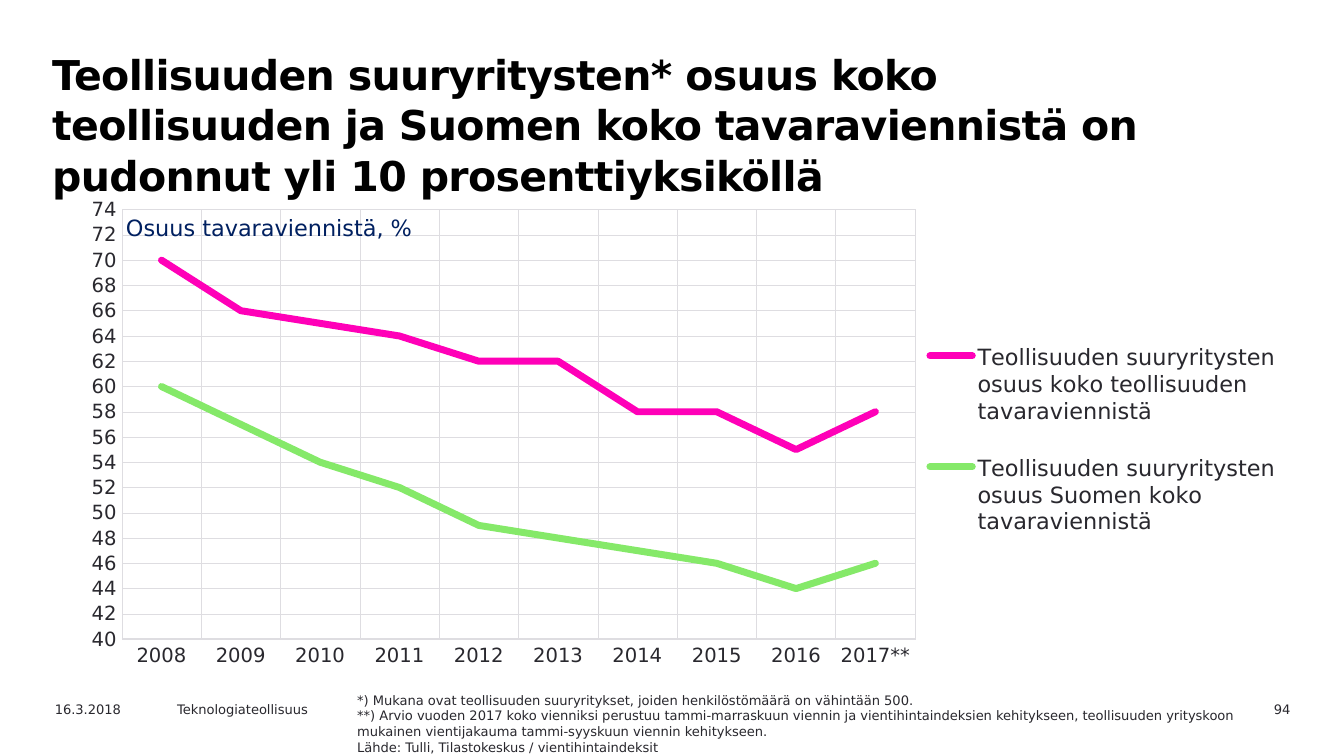
"""Build a slide on the export share of large Finnish industrial companies."""
import pptx
import pptx.chart.data
import pptx.dml.color
import pptx.enum.chart
import pptx.enum.dml
import pptx.enum.text
import pptx.oxml
import pptx.oxml.ns
import pptx.util

Inches = pptx.util.Inches
Pt = pptx.util.Pt
RGBColor = pptx.dml.color.RGBColor
ALIGN = pptx.enum.text.PP_ALIGN

FONT = "DejaVu Sans"
BLACK = RGBColor(0x00, 0x00, 0x00)
INK = RGBColor(0x29, 0x28, 0x2E)
NAVY = RGBColor(0x00, 0x20, 0x60)
GRID = RGBColor(0xDE, 0xDD, 0xE1)
PINK = RGBColor(0xFF, 0x00, 0xB8)
GREEN = RGBColor(0x85, 0xE9, 0x69)


def write_text(text, left, top, width, height, size=7, color=INK, bold=False,
               align=ALIGN.LEFT, line_pitch=None, tracking=None):
    frame = slide.shapes.add_textbox(
        Inches(left), Inches(top), Inches(width), Inches(height)).text_frame
    frame.word_wrap = True
    frame.text = text
    for paragraph in frame.paragraphs:
        paragraph.alignment = align
        if line_pitch:
            paragraph.line_spacing = Pt(line_pitch)
        for run in paragraph.runs:
            run.font.name = FONT
            run.font.size = Pt(size)
            run.font.bold = bold
            run.font.color.rgb = color
            if tracking:
                run.font._element.set("spc", str(round(tracking * 100)))


def place(element, index, inner=False, **fractions):
    for old in element.findall(pptx.oxml.ns.qn("c:layout")):
        element.remove(old)
    target = '<c:layoutTarget val="inner"/>' if inner else ""
    modes = "".join(f'<c:{key}Mode val="edge"/>' for key in fractions if key in "xy")
    values = "".join(f'<c:{key} val="{value}"/>' for key, value in fractions.items())
    element.insert(index, pptx.oxml.parse_xml(
        f'<c:layout {pptx.oxml.ns.nsdecls("c")}><c:manualLayout>'
        f'{target}{modes}{values}</c:manualLayout></c:layout>'))


presentation = pptx.Presentation()
presentation.slide_width = Inches(10)
presentation.slide_height = Inches(10 * 9 / 16)
slide = presentation.slides.add_slide(presentation.slide_layouts[6])

write_text(
    "Teollisuuden suuryritysten* osuus koko teollisuuden ja Suomen koko "
    "tavaraviennistä on pudonnut yli 10 prosenttiyksiköllä",
    0.29, 0.31, 8.82, 0.71, size=22, color=BLACK, bold=True, line_pitch=27, tracking=-0.34)

shares = pptx.chart.data.CategoryChartData(number_format="0")
shares.categories = [str(year) for year in range(2008, 2017)] + ["2017**"]
shares.add_series("Teollisuuden suuryritysten osuus koko teollisuuden tavaraviennistä",
                  [70, 66, 65, 64, 62, 62, 58, 58, 55, 58])
shares.add_series("Teollisuuden suuryritysten osuus Suomen koko tavaraviennistä",
                  [60, 57, 54, 52, 49, 48, 47, 46, 44, 46])
chart = slide.shapes.add_chart(
    pptx.enum.chart.XL_CHART_TYPE.LINE,
    Inches(0.42), Inches(1.32), Inches(9.18), Inches(3.76), shares).chart
chart.font.name = FONT
chart.font.size = Pt(10)
chart.font.color.rgb = INK
chart.plots[0].vary_by_categories = False

for series, color in zip(chart.plots[0].series, (PINK, GREEN)):
    series.smooth = False
    series.marker.style = pptx.enum.chart.XL_MARKER_STYLE.NONE
    series.format.line.color.rgb = color
    series.format.line.width = Pt(3.75)
    series.format.line._get_or_add_ln().set("cap", "rnd")

years, percent = chart.category_axis, chart.value_axis
for axis in (years, percent):
    axis.major_tick_mark = pptx.enum.chart.XL_TICK_MARK.NONE
    axis.minor_tick_mark = pptx.enum.chart.XL_TICK_MARK.NONE
    axis.tick_labels.font.name = FONT
    axis.tick_labels.font.size = Pt(10.5)
    axis.tick_labels.font.color.rgb = INK
    axis.has_major_gridlines = True
    axis.major_gridlines.format.line.color.rgb = GRID
    axis.major_gridlines.format.line.width = Pt(0.25)
years.format.line.color.rgb = GRID
years.format.line.width = Pt(0.75)
percent.format.line.fill.background()
percent.major_gridlines.format.line.dash_style = pptx.enum.dml.MSO_LINE.ROUND_DOT
percent.minimum_scale = 40
percent.maximum_scale = 74
percent.major_unit = 2

chart.has_title = True
chart.chart_title.text_frame.text = "Osuus tavaraviennistä, %"
heading = chart.chart_title.text_frame.paragraphs[0].runs[0].font
heading.name = FONT
heading.size = Pt(12)
heading.bold = False
heading.color.rgb = NAVY

chart.has_legend = True
chart.legend.position = pptx.enum.chart.XL_LEGEND_POSITION.RIGHT
chart.legend.include_in_layout = False
chart.legend.font.name = FONT
chart.legend.font.size = Pt(12)
chart.legend.font.color.rgb = INK

place(chart._chartSpace.chart.plotArea, 0, inner=True, x=0.053, y=0.064, w=0.643, h=0.85)
place(chart.chart_title._element, 1, x=0.053, y=0.062)
place(chart.legend._element, 1, x=0.698, y=0.27, w=0.3, h=0.5)

write_text("16.3.2018", 0.31, 5.17, 1, 0.18)
write_text("Teknologiateollisuus", 1.22, 5.17, 1.42, 0.18)
write_text(
    "*) Mukana ovat teollisuuden suuryritykset, joiden henkilöstömäärä on vähintään 500.\n"
    "**) Arvio vuoden 2017 koko vienniksi perustuu tammi-marraskuun viennin ja "
    "vientihintaindeksien kehitykseen, teollisuuden yrityskoon mukainen vientijakauma "
    "tammi-syyskuun viennin kehitykseen.\n"
    "Lähde: Tulli, Tilastokeskus / vientihintaindeksit",
    2.56, 5.1, 6.86, 0.18)
write_text("94", 8.76, 5.17, 0.94, 0.18, align=ALIGN.RIGHT)

presentation.save("out.pptx")
